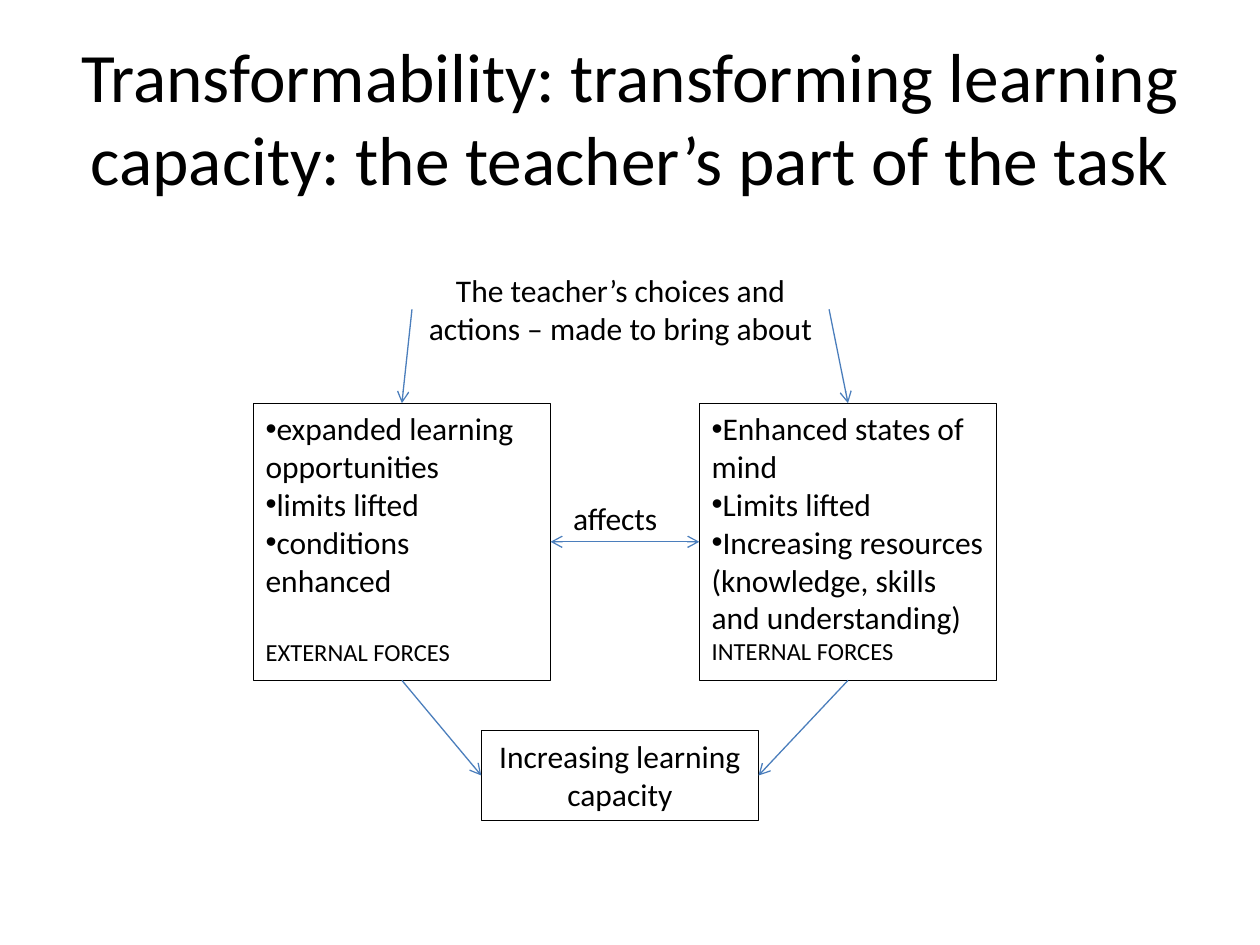
from dataclasses import dataclass
from typing import NamedTuple

from lxml.etree import SubElement
from pptx import Presentation
from pptx.dml.color import RGBColor as Rgb
from pptx.enum.shapes import MSO_CONNECTOR as Connector, MSO_SHAPE as Shape
from pptx.enum.text import MSO_ANCHOR as Anchor, PP_ALIGN as Align
from pptx.oxml.ns import qn
from pptx.util import Emu, Pt

PX = 9144


@dataclass(frozen=True)
class Theme:
    """Colours, font and sizes of the slide."""
    font: str = "Calibri"
    ink: Rgb = Rgb(0x00, 0x00, 0x00)
    arrow: Rgb = Rgb(0x4B, 0x7E, 0xBC)
    title: float = 39.6
    body: int = 18
    label: int = 14
    gap: int = 22
    stroke: float = 0.75


class Box(NamedTuple):
    """A rectangle in px."""
    left: int
    top: int
    width: int
    height: int

    def side(self, across, down):
        """Return the point at the given fractions of width and height."""
        return self.left + self.width * across, self.top + self.height * down


THEME = Theme()


def emu(*lengths):
    """Turn px lengths into EMU."""
    return [Emu(round(length * PX)) for length in lengths]


def add_bullet(para):
    """Give a paragraph a bullet without a hanging indent."""
    properties = para._p.get_or_add_pPr()
    properties.set("marL", "0")
    properties.set("indent", "0")
    SubElement(properties, qn("a:buFont")).set("typeface", "Arial")
    SubElement(properties, qn("a:buChar")).set("char", "•")


def add_span(para, text, size):
    """Add one run in the theme's font and ink."""
    span = para.add_run()
    span.text = text
    span.font.name = THEME.font
    span.font.size = Pt(size)
    span.font.color.rgb = THEME.ink


def add_text(page, box, text, size=THEME.body, align=Align.CENTER, anchor=Anchor.TOP):
    """Place a wrapped text box with one paragraph."""
    frame = page.shapes.add_textbox(*emu(*box)).text_frame
    frame.word_wrap = True
    frame.vertical_anchor = anchor
    para = frame.paragraphs[0]
    para.alignment = align
    add_span(para, text, size)


def add_panel(page, box):
    """Draw an outlined rectangle and return its text frame."""
    panel = page.shapes.add_shape(Shape.RECTANGLE, *emu(*box))
    panel.shadow.inherit = False
    panel.fill.background()
    panel.line.color.rgb = THEME.ink
    panel.line.width = Pt(THEME.stroke)
    frame = panel.text_frame
    frame.word_wrap = True
    frame.vertical_anchor = Anchor.TOP
    return frame


def add_forces(page, box, points, label, gap=0):
    """Build a panel of bulleted points closed by a small label."""
    frame = add_panel(page, box)
    for index, point in enumerate(points):
        para = frame.add_paragraph() if index else frame.paragraphs[0]
        para.alignment = Align.LEFT
        add_bullet(para)
        add_span(para, point, THEME.body)
    para = frame.add_paragraph()
    para.alignment = Align.LEFT
    para.space_before = Pt(gap)
    add_span(para, label, THEME.label)


def add_outcome(page, box, text):
    """Build the panel that holds the result."""
    para = add_panel(page, box).paragraphs[0]
    para.alignment = Align.CENTER
    add_span(para, text, THEME.body)


def add_arrow(page, start, end, ends=("tailEnd",)):
    """Draw a straight line with open arrowheads at the named ends."""
    arrow = page.shapes.add_connector(Connector.STRAIGHT, *emu(*start, *end))
    arrow.line.color.rgb = THEME.arrow
    arrow.line.width = Pt(THEME.stroke)
    for name in ends:
        SubElement(arrow.line._ln, qn(f"a:{name}")).set("type", "arrow")
    SubElement(arrow._element.spPr, qn("a:effectLst"))


def add_diagram(page, box):
    """Lay out the choices, the two forces and the outcome in a box."""
    left, top, width, height = box
    panel_width, panel_height = 236, 220
    choices = Box(left + 126, top, 331, 71)
    external = Box(left, top + 110, panel_width, panel_height)
    internal = external._replace(left=left + width - panel_width)
    outcome = Box(left + 181, top + height - 71, 220, 71)
    affects = Box(left + 244, top + 181, 110, 40)

    add_forces(
        page, external,
        ["expanded learning opportunities", "limits lifted", "conditions enhanced"],
        "EXTERNAL FORCES", THEME.gap)
    add_forces(
        page, internal,
        ["Enhanced states of mind", "Limits lifted",
         "Increasing resources (knowledge, skills and understanding)"],
        "INTERNAL FORCES")
    add_outcome(page, outcome, "Increasing learning capacity")
    add_text(page, affects, "affects", align=Align.LEFT)
    add_text(page, choices, "The teacher’s choices and actions – made to bring about")

    add_arrow(page, external.side(1, 0.5), internal.side(0, 0.5), ("headEnd", "tailEnd"))
    for force, edge in ((internal, 1), (external, 0)):
        add_arrow(page, force.side(0.5, 1), outcome.side(edge, 0.5))
        add_arrow(page, choices.side(edge, 0.5), force.side(0.5, 0))


def main():
    """Build and save the deck."""
    deck = Presentation()
    deck.slide_width, deck.slide_height = emu(1000, 750)
    page = deck.slides.add_slide(deck.slide_layouts[6])
    add_text(
        page, Box(50, 30, 900, 125),
        "Transformability: transforming learning capacity: the teacher’s part of the task",
        THEME.title, anchor=Anchor.MIDDLE)
    add_diagram(page, Box(201, 210, 590, 441))
    deck.save("out.pptx")


if __name__ == "__main__":
    main()
